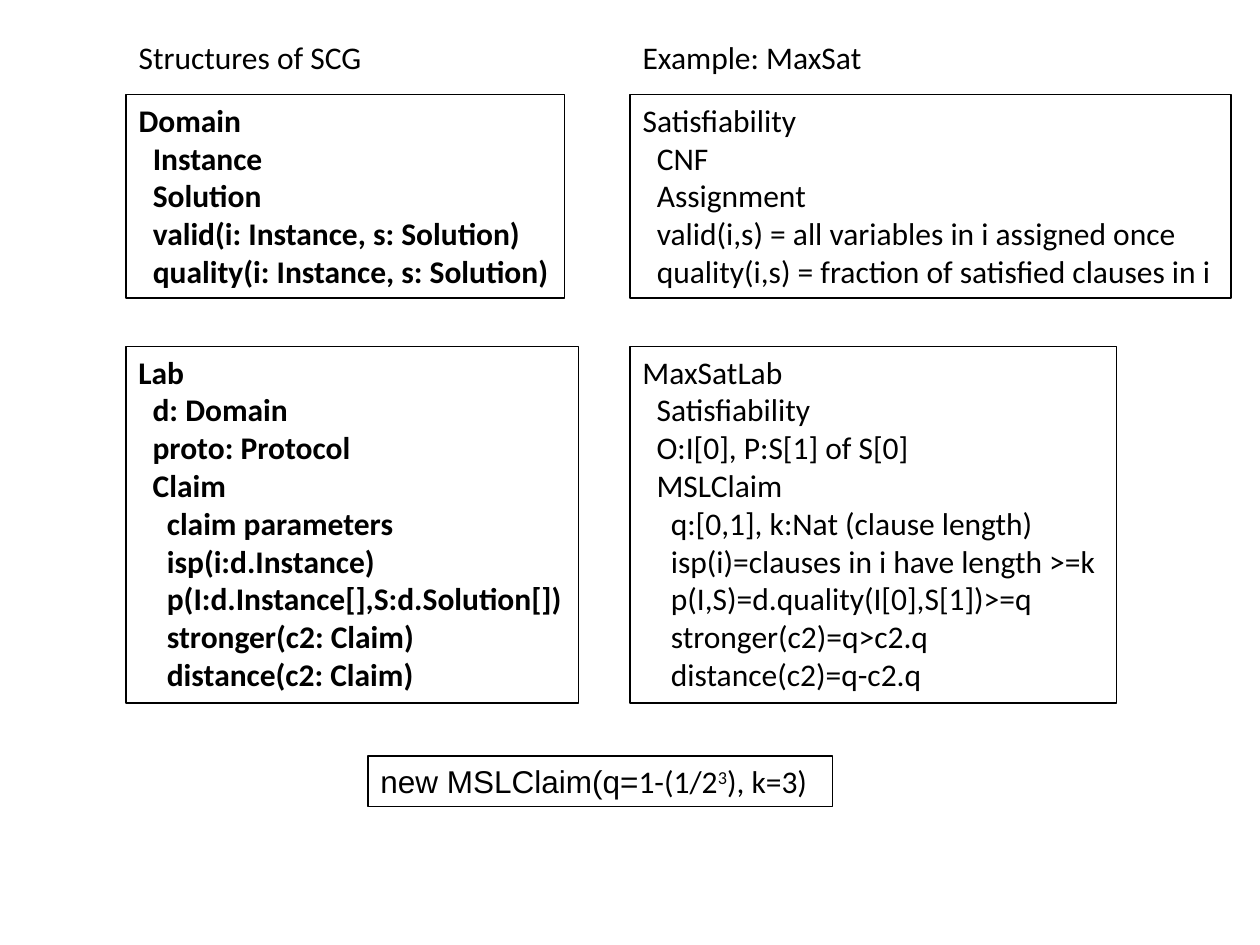
from dataclasses import dataclass
from typing import Optional

from lxml.etree import SubElement
from pptx import Presentation
from pptx.dml.color import RGBColor
from pptx.enum.text import MSO_ANCHOR, MSO_AUTO_SIZE, PP_ALIGN
from pptx.oxml.ns import qn
from pptx.util import Inches, Pt

BLACK = RGBColor(0, 0, 0)
COLS, ROWS = 40, 30
LEFT, RIGHT = 4, 20
HEAD, TOP, MID, LOW = 1, 3, 11, 24
PAD, LINE, STEP = Inches(0.1), Pt(21.84), Pt(8.14)
FRAME = {
    "word_wrap": True,
    "auto_size": MSO_AUTO_SIZE.NONE,
    "vertical_anchor": MSO_ANCHOR.TOP,
}
PARA = {"alignment": PP_ALIGN.LEFT, "space_before": Pt(0), "space_after": Pt(0)}
FLAT, TREE, DEEP = (0,), (0, 1, 1, 1, 1), (0, 1, 1, 1, 2, 2, 2, 2, 2)


@dataclass(frozen=True)
class Part:
    text: str
    font: str = "Calibri"
    raised: bool = False


@dataclass(frozen=True)
class Panel:
    col: float
    row: float
    width: float
    levels: tuple[int, ...]
    lines: tuple
    bold: bool = False
    border: bool = True
    slot: Optional[int] = None


PANELS = (
    Panel(LEFT, HEAD, 7.96, FLAT, ("Structures of SCG",), border=False, slot=1),
    Panel(RIGHT, HEAD, 7.84, FLAT, ("Example: MaxSat",), border=False, slot=3),
    Panel(LEFT, TOP, 13.92, TREE, (
        "Domain",
        "Instance",
        "Solution",
        "valid(i: Instance, s: Solution)",
        "quality(i: Instance, s: Solution)",
    ), bold=True, slot=2),
    Panel(RIGHT, TOP, 19.08, TREE, (
        "Satisfiability",
        "CNF",
        "Assignment",
        "valid(i,s) = all variables in i assigned once",
        "quality(i,s) = fraction of satisfied clauses in i",
    ), slot=4),
    Panel(LEFT, MID, 14.36, DEEP, (
        "Lab",
        "d: Domain",
        "proto: Protocol",
        "Claim",
        "claim parameters",
        "isp(i:d.Instance)",
        "p(I:d.Instance[],S:d.Solution[])",
        "stronger(c2: Claim)",
        "distance(c2: Claim)",
    ), bold=True),
    Panel(RIGHT, MID, 15.44, DEEP, (
        "MaxSatLab",
        "Satisfiability",
        "O:I[0], P:S[1] of S[0]",
        "MSLClaim",
        "q:[0,1], k:Nat (clause length)",
        "isp(i)=clauses in i have length >=k",
        "p(I,S)=d.quality(I[0],S[1])>=q",
        "stronger(c2)=q>c2.q",
        "distance(c2)=q-c2.q",
    )),
    Panel(11.68, LOW, 14.76, FLAT, ((
        Part("new MSLClaim(q=", "Arial"),
        Part("1-(1/2"),
        Part("3", raised=True),
        Part("), k=3)"),
    ),)),
)


def apply(target, values: dict) -> None:
    for name, value in values.items():
        setattr(target, name, value)


def write(para, parts: tuple[Part, ...], level: int, bold: bool) -> None:
    apply(para, PARA)
    props = para._p.get_or_add_pPr()
    props.set("marL", str(level * STEP))
    props.set("indent", "0")
    SubElement(props, qn("a:buNone"))
    for part in parts:
        run = para.add_run()
        run.text = part.text
        apply(run.font, {"name": part.font, "size": Pt(18), "bold": bold})
        run.font.color.rgb = BLACK
        if part.raised:
            run.font._element.set("baseline", "30000")


def draw(slide, panel: Panel, unit: int) -> None:
    if panel.slot is None:
        box = slide.shapes.add_textbox(0, 0, unit, unit)
    else:
        box = next(p for p in slide.placeholders
                   if p.placeholder_format.idx == panel.slot)
    apply(box, {
        "left": round(panel.col * unit),
        "top": round(panel.row * unit),
        "width": round(panel.width * unit),
        "height": PAD + len(panel.lines) * LINE,
    })
    if panel.border:
        box.line.color.rgb = BLACK
        box.line.width = Pt(0.75)
    frame = box.text_frame
    apply(frame, FRAME)
    for n, (level, line) in enumerate(zip(panel.levels, panel.lines)):
        para = frame.add_paragraph() if n else frame.paragraphs[0]
        parts = (Part(line),) if isinstance(line, str) else line
        write(para, parts, level, panel.bold)


def main() -> None:
    deck = Presentation()
    unit = Inches(0.25)
    deck.slide_width, deck.slide_height = COLS * unit, ROWS * unit
    slide = deck.slides.add_slide(deck.slide_layouts[4])
    title = slide.shapes.title._element
    title.getparent().remove(title)
    for panel in PANELS:
        draw(slide, panel, unit)
    deck.save("out.pptx")


if __name__ == "__main__":
    main()
